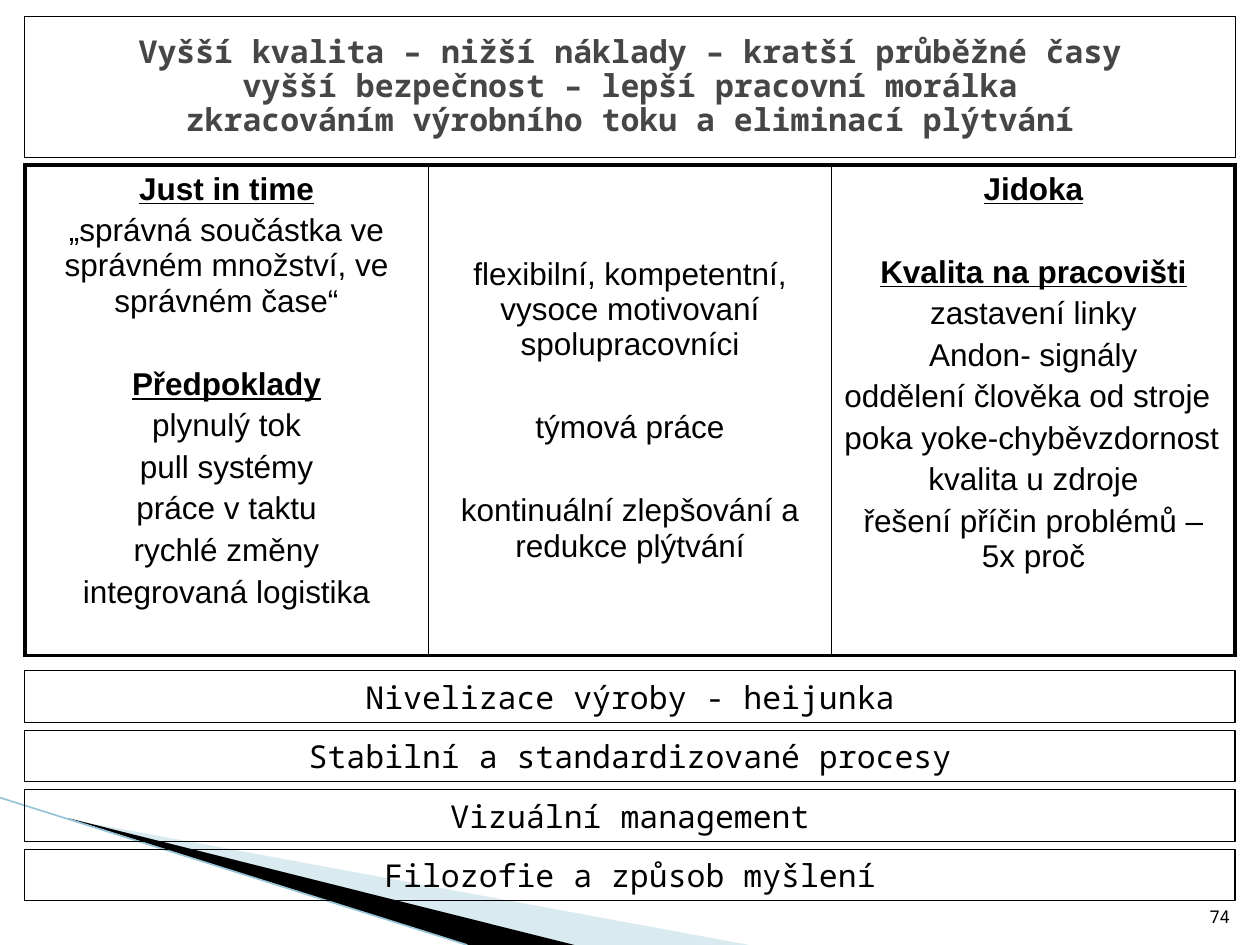
"""Build the lean production house slide."""
from copy import deepcopy

from lxml import etree
from pptx import Presentation
from pptx.dml.color import RGBColor
from pptx.enum.shapes import MSO_CONNECTOR, MSO_SHAPE
from pptx.enum.text import MSO_ANCHOR, MSO_AUTO_SIZE, PP_ALIGN
from pptx.oxml.ns import qn
from pptx.util import Cm, Pt

CENTER, LEFT, RIGHT = PP_ALIGN.CENTER, PP_ALIGN.LEFT, PP_ALIGN.RIGHT
TOP, MIDDLE, BOTTOM = MSO_ANCHOR.TOP, MSO_ANCHOR.MIDDLE, MSO_ANCHOR.BOTTOM
RECTANGLE = MSO_SHAPE.RECTANGLE
STRAIGHT = MSO_CONNECTOR.STRAIGHT
NO_AUTOFIT = MSO_AUTO_SIZE.NONE

COLORS = {"ink": "000000", "title": "464646", "wave": "A0CBDC", "edge": "97C5D8"}
MONO, SANS = "Noto Sans Mono", "Arial"
MARGIN, WIDTH = 0.5, 24.4
TIGHT, GAP = 3.6, 27.3
THIN, THICK = 1, 2.25

HEADING = {"bold": True, "underline": True}
SECTION = {**HEADING, "before": GAP}
APART = {"before": GAP}
FLUSH = {"align": LEFT}

PILLARS = [
    (TOP, [
        ("Just in time", HEADING),
        ("„správná součástka ve správném množství, ve správném čase“", {}),
        ("Předpoklady", SECTION),
        ("plynulý tok", {}),
        ("pull systémy", {}),
        ("práce v taktu", {}),
        ("rychlé změny", {}),
        ("integrovaná logistika", {}),
    ]),
    (MIDDLE, [
        ("flexibilní, kompetentní,\vvysoce motivovaní\vspolupracovníci", {}),
        ("týmová práce", APART),
        ("kontinuální zlepšování a redukce plýtvání", APART),
    ]),
    (TOP, [
        ("Jidoka", HEADING),
        ("Kvalita na pracovišti", SECTION),
        ("zastavení linky", {}),
        ("Andon- signály", {}),
        ("oddělení člověka od stroje", FLUSH),
        ("poka yoke-chyběvzdornost", FLUSH),
        ("kvalita u zdroje", {}),
        ("řešení příčin problémů – 5x proč", {}),
    ]),
]
FOUNDATIONS = [
    "Nivelizace výroby - heijunka",
    "Stabilní a standardizované procesy",
    "Vizuální management",
    "Filozofie a způsob myšlení",
]


def color(name):
    """Return the named colour."""
    return RGBColor.from_string(COLORS[name])


def write(para, text, font=MONO, size=18, ink="ink", bold=False,
          underline=False, align=CENTER, before=0, spacing=None):
    """Fill a paragraph with formatted text."""
    para.text = text
    para.alignment = align
    para.space_before = Pt(before)
    if spacing:
        para.line_spacing = spacing
    for span in para.runs:
        span.font.name = font
        span.font.size = Pt(size)
        span.font.bold = bold
        span.font.underline = underline
        span.font.color.rgb = color(ink)
    for line_break in para._p.findall(qn("a:br")):
        line_break.append(deepcopy(para.runs[0]._r.rPr))


def set_frame(box, anchor=MIDDLE):
    """Wrap the text of a box at a fixed size and return its frame."""
    frame = box.text_frame
    frame.word_wrap = True
    frame.auto_size = NO_AUTOFIT
    frame.vertical_anchor = anchor
    return frame


def outline(box):
    """Give a box a thin dark outline and no fill."""
    box.fill.background()
    box.line.color.rgb = color("ink")
    box.line.width = Pt(0.75)


def add_wedge(page, points, fill, opacity=100):
    """Draw a filled polygon without an outline."""
    corners = [(Cm(x), Cm(y)) for x, y in points]
    builder = page.shapes.build_freeform(*corners[0])
    builder.add_line_segments(corners[1:], close=True)
    wedge = builder.convert_to_shape()
    wedge.shadow.inherit = False
    wedge.line.fill.background()
    wedge.fill.solid()
    wedge.fill.fore_color.rgb = color(fill)
    if opacity < 100:
        tint = wedge._element.spPr.find(".//" + qn("a:srgbClr"))
        etree.SubElement(tint, qn("a:alpha"), val=str(opacity * 1000))


def add_edge(page, start, end):
    """Draw the line along the wave."""
    edge = page.shapes.add_connector(STRAIGHT, *map(Cm, start + end))
    edge.line.color.rgb = color("edge")
    edge.line.width = Pt(0.95)
    etree.SubElement(edge._element.spPr, qn("a:effectLst"))


def add_title(page, text):
    """Place the framed title."""
    title = page.shapes.title
    title.left, title.top = Cm(MARGIN), Cm(0.33)
    title.width, title.height = Cm(WIDTH), Cm(2.84)
    outline(title)
    write(set_frame(title).paragraphs[0], text, ink="title", bold=True, spacing=0.9)


def add_border(cell, side, width):
    """Draw one border of a table cell."""
    line = etree.SubElement(cell._tc.get_or_add_tcPr(), qn("a:ln" + side),
                            w=str(Pt(width)))
    fill = etree.SubElement(line, qn("a:solidFill"))
    etree.SubElement(fill, qn("a:srgbClr"), val=COLORS["ink"])


def add_pillars(page):
    """Place the table with the three pillars."""
    last = len(PILLARS) - 1
    table = page.shapes.add_table(1, len(PILLARS), Cm(MARGIN), Cm(3.33),
                                  Cm(WIDTH), Cm(9.88)).table
    table.first_row = table.horz_banding = False
    for index, (anchor, lines) in enumerate(PILLARS):
        cell = table.cell(0, index)
        add_border(cell, "L", THICK if index == 0 else THIN)
        add_border(cell, "R", THICK if index == last else THIN)
        add_border(cell, "T", THICK)
        add_border(cell, "B", THICK)
        cell.fill.background()
        cell.vertical_anchor = anchor
        frame = cell.text_frame
        for row, (text, style) in enumerate(lines):
            para = frame.add_paragraph() if row else frame.paragraphs[0]
            write(para, text, **{"font": SANS, "before": TIGHT if row else 0, **style})


def add_foundation(page, text, top):
    """Place one full-width foundation bar."""
    bar = page.shapes.add_shape(RECTANGLE, Cm(MARGIN), Cm(top), Cm(WIDTH), Cm(1.04))
    bar.shadow.inherit = False
    outline(bar)
    write(set_frame(bar).paragraphs[0], text)


def add_page_number(page, text):
    """Place the page number in the lower right corner."""
    box = page.shapes.add_textbox(Cm(24.03), Cm(17.8), Cm(1.02), Cm(1.02))
    write(set_frame(box, BOTTOM).paragraphs[0], text, size=10, align=RIGHT)


def main():
    """Build and save the deck."""
    deck = Presentation()
    deck.slide_width, deck.slide_height = Cm(25.4), Cm(19.05)
    page = deck.slides.add_slide(deck.slide_layouts[5])
    add_wedge(page, [(1.4, 16.52), (15.1, 19.05), (11.58, 19.05)], "wave", 40)
    add_wedge(page, [(1.36, 16.49), (11.58, 19.05), (9.42, 19.05)], "ink")
    add_edge(page, (0, 16.08), (9.42, 19.05))
    add_title(page, "Vyšší kvalita – nižší náklady – kratší průběžné časy\v"
                    "vyšší bezpečnost – lepší pracovní morálka\v"
                    "zkracováním výrobního toku a eliminací plýtvání")
    add_pillars(page)
    for index, text in enumerate(FOUNDATIONS):
        add_foundation(page, text, 13.52 + 1.2 * index)
    add_page_number(page, "74")
    deck.save("out.pptx")


if __name__ == "__main__":
    main()
